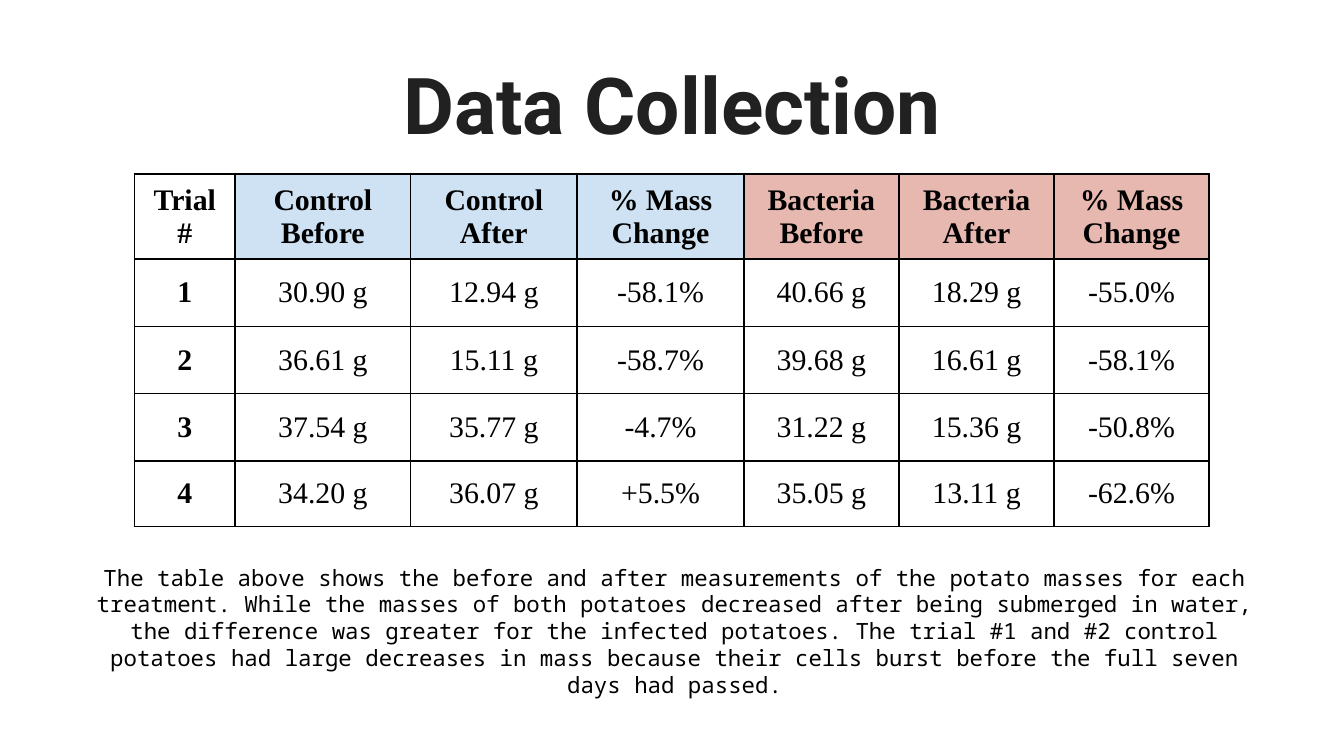
from dataclasses import dataclass

from lxml import etree
from pptx import Presentation
from pptx import util as u
from pptx.dml.color import RGBColor
from pptx.enum import text
from pptx.oxml.ns import qn

PX = 4572


@dataclass(frozen=True)
class Theme:
    title_font: str = "Roboto"
    table_font: str = "Times New Roman"
    caption_font: str = "Noto Sans Mono"
    title_size: int = 42
    table_size: int = 16
    caption_size: int = 12
    title_ink: str = "212121"
    ink: str = "000000"
    control: str = "CFE2F3"
    bacteria: str = "E6B8AF"


THEME = Theme()

HEADINGS = [
    ("Trial #", None),
    ("Control Before", THEME.control),
    ("Control After", THEME.control),
    ("% Mass Change", THEME.control),
    ("Bacteria Before", THEME.bacteria),
    ("Bacteria After", THEME.bacteria),
    ("% Mass Change", THEME.bacteria),
]
TRIALS = [
    ("1", "30.90 g", "12.94 g", "-58.1%", "40.66 g", "18.29 g", "-55.0%"),
    ("2", "36.61 g", "15.11 g", "-58.7%", "39.68 g", "16.61 g", "-58.1%"),
    ("3", "37.54 g", "35.77 g", "-4.7%", "31.22 g", "15.36 g", "-50.8%"),
    ("4", "34.20 g", "36.07 g", "+5.5%", "35.05 g", "13.11 g", "-62.6%"),
]
COLUMN_WIDTHS = [150, 261, 248, 248, 231, 231, 230]
ROW_HEIGHTS = [100, 100, 100, 100, 98]
CAPTION = (
    "The table above shows the before and after measurements of the potato "
    "masses for each treatment. While the masses of both potatoes decreased "
    "after being submerged in water, the difference was greater for the "
    "infected potatoes. The trial #1 and #2 control potatoes had large "
    "decreases in mass because their cells burst before the full seven days "
    "had passed."
)


def px(length):
    return u.Emu(length * PX)


def write_centred(frame, words, font, size, ink, bold=False):
    paragraph = frame.paragraphs[0]
    paragraph.alignment = text.PP_ALIGN.CENTER
    run = paragraph.add_run()
    run.text = words
    run.font.name = font
    run.font.size = u.Pt(size)
    run.font.bold = bold
    run.font.color.rgb = RGBColor.from_string(ink)


def set_up_frame(frame):
    frame.word_wrap = True
    frame.auto_size = text.MSO_AUTO_SIZE.NONE
    frame.vertical_anchor = text.MSO_ANCHOR.TOP
    frame.margin_left = frame.margin_right = px(20)
    frame.margin_top = frame.margin_bottom = px(20)


def add_title(slide, words):
    title = slide.shapes.title
    title.left, title.top, title.width, title.height = map(px, (68, 64, 1864, 176))
    set_up_frame(title.text_frame)
    write_centred(title.text_frame, words, THEME.title_font,
                  THEME.title_size, THEME.title_ink, bold=True)


def add_caption(slide, words):
    caption = slide.shapes.add_textbox(*map(px, (101, 819, 1806, 212)))
    set_up_frame(caption.text_frame)
    write_centred(caption.text_frame, words, THEME.caption_font,
                  THEME.caption_size, THEME.ink)


def draw_borders(cell):
    properties = cell._tc.get_or_add_tcPr()
    for position, side in enumerate(("a:lnL", "a:lnR", "a:lnT", "a:lnB")):
        border = etree.Element(qn(side), w=str(u.Pt(1)))
        solid = etree.SubElement(border, qn("a:solidFill"))
        etree.SubElement(solid, qn("a:srgbClr"), val=THEME.ink)
        properties.insert(position, border)


def fill_cell(cell, words, bold, colour=None):
    cell.vertical_anchor = text.MSO_ANCHOR.MIDDLE
    cell.margin_left = cell.margin_right = px(14)
    cell.margin_top = cell.margin_bottom = px(14)
    if colour:
        cell.fill.solid()
        cell.fill.fore_color.rgb = RGBColor.from_string(colour)
    else:
        cell.fill.background()
    draw_borders(cell)
    write_centred(cell.text_frame, words, THEME.table_font,
                  THEME.table_size, THEME.ink, bold)


def add_trial_table(slide):
    table = slide.shapes.add_table(
        len(ROW_HEIGHTS), len(COLUMN_WIDTHS), px(200), px(259),
        px(sum(COLUMN_WIDTHS)), px(sum(ROW_HEIGHTS))).table
    table.horz_banding = False
    for column, width in zip(table.columns, COLUMN_WIDTHS):
        column.width = px(width)
    for row, height in zip(table.rows, ROW_HEIGHTS):
        row.height = px(height)
    for index, (heading, colour) in enumerate(HEADINGS):
        fill_cell(table.cell(0, index), heading, True, colour)
    for row, trial in enumerate(TRIALS, start=1):
        for index, value in enumerate(trial):
            fill_cell(table.cell(row, index), value, index == 0)


def main():
    deck = Presentation()
    deck.slide_width, deck.slide_height = px(2000), px(1125)
    slide = deck.slides.add_slide(deck.slide_layouts[5])
    add_title(slide, "Data Collection")
    add_trial_table(slide)
    add_caption(slide, CAPTION)
    deck.save("out.pptx")


if __name__ == "__main__":
    main()
